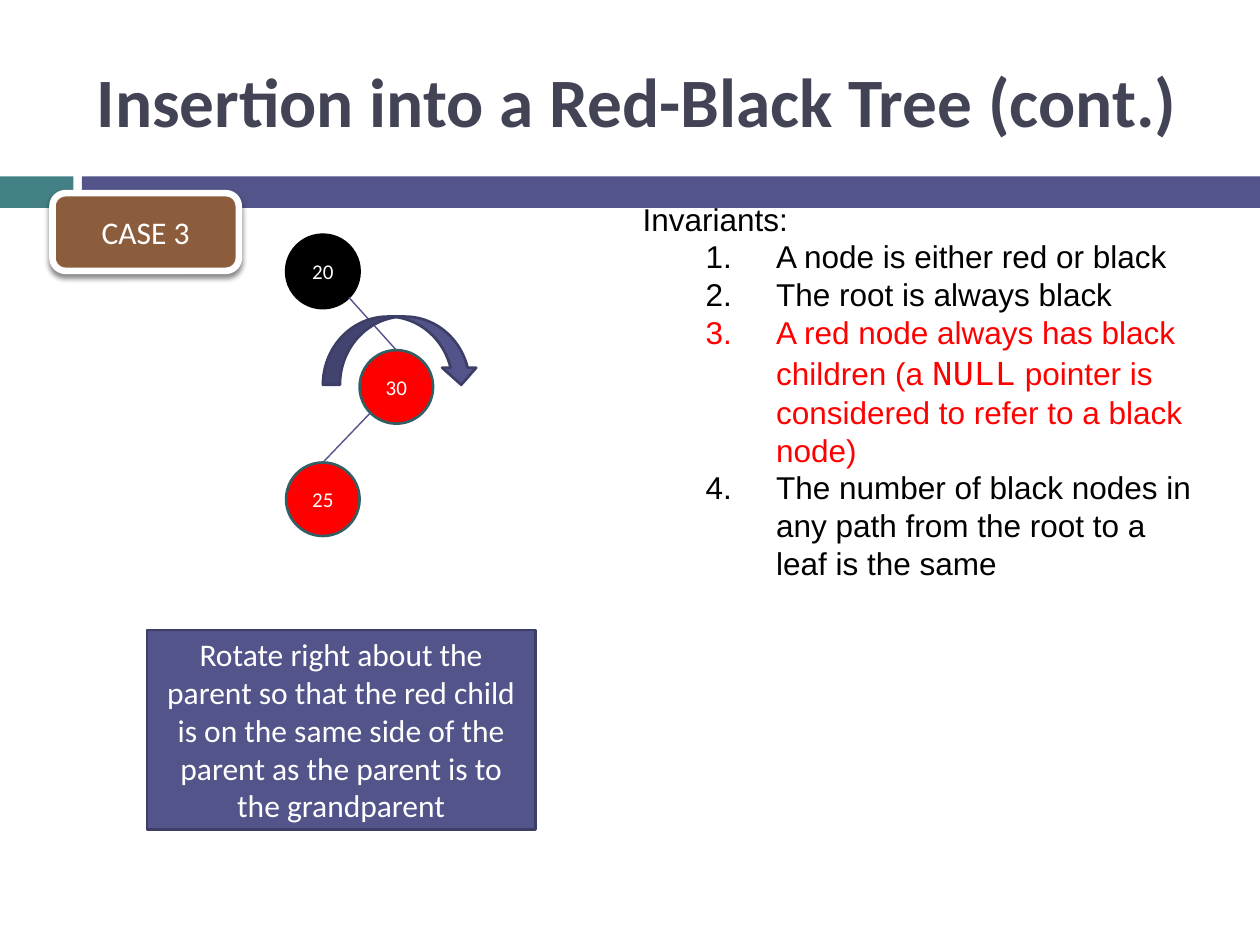
from dataclasses import dataclass
from math import atan2, cos, sin

from lxml.etree import SubElement
from pptx import Presentation
from pptx.dml.color import RGBColor
from pptx.enum.shapes import MSO_CONNECTOR, MSO_SHAPE
from pptx.enum.text import MSO_ANCHOR, MSO_AUTO_SIZE, PP_ALIGN
from pptx.oxml.ns import qn
from pptx.util import Inches, Pt


@dataclass(frozen=True)
class Theme:
    """Colours, fonts and type sizes of the slide."""
    indigo: str = "53548A"
    indigo_edge: str = "3D3E66"
    teal: str = "438086"
    teal_edge: str = "325F63"
    slate: str = "424456"
    brown: str = "8B5D3D"
    red: str = "FF0000"
    black: str = "000000"
    white: str = "FFFFFF"
    sans: str = "Calibri"
    plain: str = "Arial"
    code: str = "Courier New"
    title: float = 39.6
    body: float = 18
    code_size: float = 20
    node: float = 12


@dataclass(frozen=True)
class Box:
    """A region in cells of a grid of 120 columns by 90 rows."""
    left: float
    top: float
    width: float
    height: float

    def inner(self, left, top, width, height):
        """Return a box placed relative to this one."""
        return Box(self.left + left, self.top + top, width, height)

    def emu(self):
        """Return left, top, width and height as slide lengths."""
        return [Inches(cells / 12) for cells in (self.left, self.top, self.width, self.height)]


THEME = Theme()


def style_font(font, color, size, name, bold=False):
    """Give a font its colour, size, face and weight."""
    font.color.rgb = RGBColor.from_string(color)
    for key, value in {"size": Pt(size), "name": name, "bold": bold}.items():
        setattr(font, key, value)


def place(shape, box):
    """Move a shape to a box."""
    for key, value in zip(("left", "top", "width", "height"), box.emu()):
        setattr(shape, key, value)


def add_block(slide, preset, box, fill, edge=None, weight=1.5, text="", size=THEME.body):
    """Add a filled preset shape with optional outline and centred text."""
    block = slide.shapes.add_shape(preset, *box.emu())
    block.shadow.inherit = False
    block.fill.solid()
    block.fill.fore_color.rgb = RGBColor.from_string(fill)
    if edge:
        block.line.color.rgb = RGBColor.from_string(edge)
        block.line.width = Pt(weight)
    else:
        block.line.fill.background()
    if text:
        frame = block.text_frame
        frame.word_wrap = True
        frame.vertical_anchor = MSO_ANCHOR.MIDDLE
        label = frame.paragraphs[0]
        label.alignment = PP_ALIGN.CENTER
        label.add_run().text = text
        style_font(label.runs[0].font, THEME.white, size, THEME.sans)
    return block


def add_band(slide, box):
    """Place the two-colour band behind everything else."""
    accent, gap = 7, 0.8
    rest = accent + gap
    for left, width, color in ((0, accent, THEME.teal), (rest, box.width - rest, THEME.indigo)):
        stripe = add_block(slide, MSO_SHAPE.RECTANGLE, box.inner(left, 0, width, box.height), color)
        slide.shapes.element.insert(2, stripe.element)


def add_title(slide, box, text):
    """Fill the title placeholder."""
    title = slide.shapes.title
    place(title, box)
    title.text_frame.vertical_anchor = MSO_ANCHOR.MIDDLE
    heading = title.text_frame.paragraphs[0]
    heading.alignment = PP_ALIGN.LEFT
    heading.add_run().text = text
    style_font(heading.runs[0].font, THEME.slate, THEME.title, THEME.sans, True)


def add_invariants(slide, box, heading, rules):
    """Fill the body placeholder with a heading and numbered rules."""
    body = slide.placeholders[1]
    place(body, box)
    frame = body.text_frame
    frame.auto_size = MSO_AUTO_SIZE.SHAPE_TO_FIT_TEXT
    plain = (THEME.body, THEME.plain)
    code = (THEME.code_size, THEME.code)
    for number, (color, parts) in enumerate([(THEME.black, [heading]), *rules]):
        line = frame.add_paragraph() if number else frame.paragraphs[0]
        line.space_before = Pt(0)
        line.level = min(number, 1)
        margin, hang = (1.06, -0.56) if number else (0, 0)
        settings = line._p.get_or_add_pPr()
        settings.set("marL", str(Inches(margin)))
        settings.set("indent", str(Inches(hang)))
        if number:
            SubElement(settings, qn("a:buFont"), typeface=THEME.plain)
            SubElement(settings, qn("a:buAutoNum"), type="arabicPeriod")
        else:
            SubElement(settings, qn("a:buNone"))
        for part in parts:
            run = line.add_run()
            run.text = part
            style_font(run.font, color, *(code if part == "NULL" else plain))


def add_edge(slide, parent, child):
    """Join a parent node's rim to the top of its child."""
    radius = parent.width / 2
    x, y = parent.left + radius, parent.top + radius
    side = 1 if child.left > parent.left else -1
    angle = atan2(1, side)
    edge = slide.shapes.add_connector(
        MSO_CONNECTOR.STRAIGHT, int(x + radius * cos(angle)), int(y + radius * sin(angle)),
        child.left + child.width // 2, child.top)
    edge.end_connect(child, 0)
    edge.line.color.rgb = RGBColor.from_string(THEME.indigo)
    edge.line.width = Pt(0.79)
    SubElement(edge.element.spPr, qn("a:effectLst"))


def add_tree(slide, box):
    """Draw the three nodes, their edges and the rotation arrow."""
    size = 7
    parent = None
    for text, left, top, fill, rim in (
            ("20", 0, 0, THEME.black, THEME.black),
            ("30", size, 11, THEME.red, THEME.teal_edge),
            ("25", 0, box.height - size, THEME.red, THEME.teal_edge)):
        node = add_block(slide, MSO_SHAPE.OVAL, box.inner(left, top, size, size),
                         fill, rim, text=text, size=THEME.node)
        if parent:
            add_edge(slide, parent, node)
        parent = node
    add_block(slide, MSO_SHAPE.CURVED_DOWN_ARROW, box.inner(size / 2, 7.8, 14.8, 6.5),
              THEME.indigo, THEME.indigo_edge)


def add_case_label(slide, box, text):
    """Add the rounded case label with its soft shadow."""
    label = add_block(slide, MSO_SHAPE.ROUNDED_RECTANGLE, box, THEME.brown, THEME.white, 3.75, text)
    effects = label.element.spPr.find(qn("a:effectLst"))
    shadow = SubElement(effects, qn("a:outerShdw"), blurRad=str(Pt(3)), dist=str(Pt(2.4)),
                        dir="5400000", rotWithShape="0")
    color = SubElement(shadow, qn("a:srgbClr"), val=THEME.black)
    SubElement(color, qn("a:alpha"), val="45000")


def main():
    """Build and save the slide."""
    deck = Presentation()
    deck.slide_width, deck.slide_height = Inches(10), Inches(7.5)
    slide = deck.slides.add_slide(deck.slide_layouts[1])
    add_band(slide, Box(0, 16.8, 120, 3))
    add_title(slide, Box(8, 3, 107, 13), "Insertion into a Red-Black Tree (cont.)")
    add_invariants(slide, Box(60, 18.4, 55, 39.2), "Invariants:", [
        (THEME.black, ["A node is either red or black"]),
        (THEME.black, ["The root is always black"]),
        (THEME.red, ["A red node always has black children (a ", "NULL",
                     " pointer is considered to refer to a black node)"]),
        (THEME.black, ["The number of black nodes in any path from the root to a leaf is the same"]),
    ])
    add_tree(slide, Box(27.25, 22.35, 18.3, 28.7))
    add_block(slide, MSO_SHAPE.RECTANGLE, Box(14, 60, 37, 19), THEME.indigo, THEME.indigo_edge,
              text="Rotate right about the parent so that the red child is on the same side "
                   "of the parent as the parent is to the grandparent")
    add_case_label(slide, Box(5, 18.4, 17.75, 7.4), "CASE 3")
    deck.save("out.pptx")


if __name__ == "__main__":
    main()
